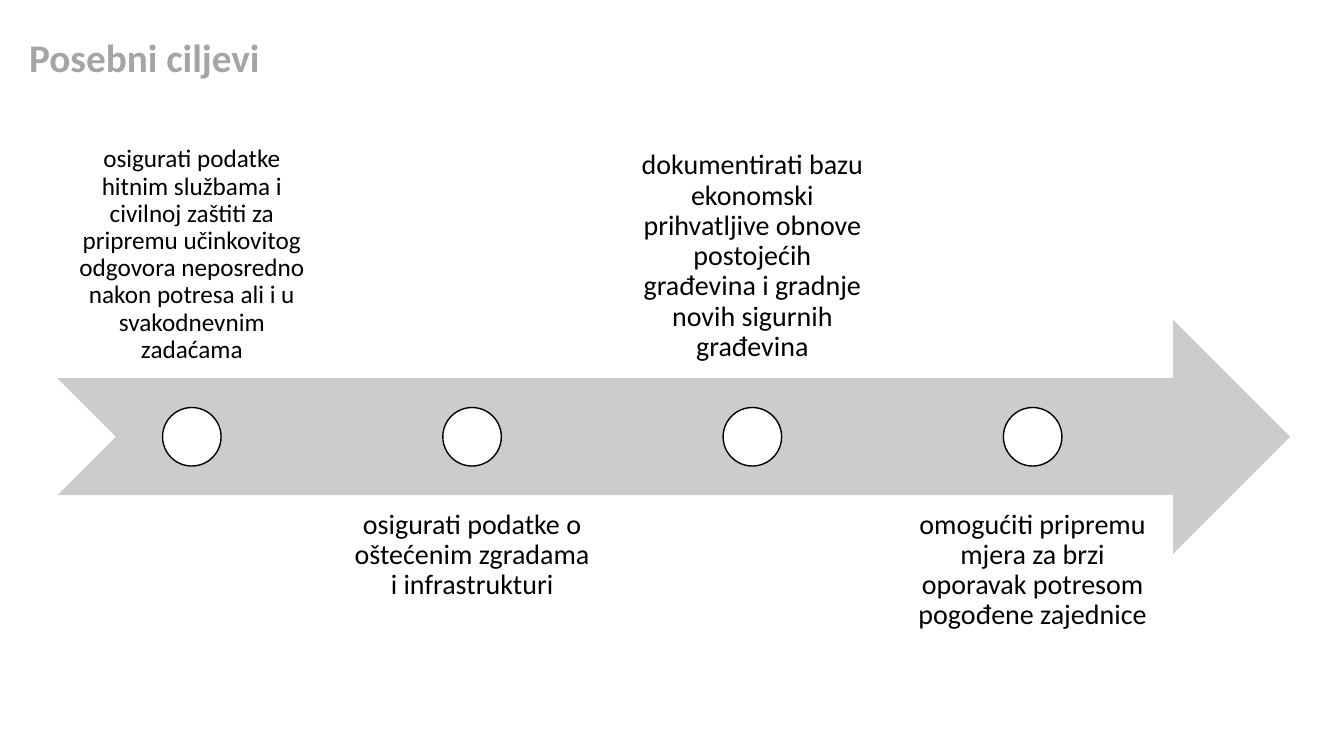
from pptx import Presentation
from pptx.dml.color import RGBColor
from pptx.enum import shapes, text
from pptx.util import Pt

GOALS = [
    ("osigurati podatke hitnim službama i civilnoj zaštiti za pripremu učinkovitog "
     "odgovora neposredno nakon potresa ali i u svakodnevnim zadaćama", 18),
    ("osigurati podatke o oštećenim zgradama i infrastrukturi", 20),
    ("dokumentirati bazu ekonomski prihvatljive obnove postojećih građevina i gradnje "
     "novih sigurnih građevina", 20),
    ("omogućiti pripremu mjera za brzi oporavak potresom pogođene zajednice", 20),
]


def colour(value):
    return RGBColor.from_string(value)


class Slide:
    """Style and current page; all lengths are in points."""
    font = "Calibri"
    grey, band, black, white = "A5A5A5", "CCCCCC", "000000", "FFFFFF"

    def __init__(self, deck):
        self.page = deck.slides.add_slide(deck.slide_layouts[5])

    def set_text(self, frame, wording, size, ink, align, anchor, bold=False):
        frame.word_wrap = True
        frame.auto_size = text.MSO_AUTO_SIZE.NONE
        frame.vertical_anchor = anchor
        para = frame.paragraphs[0]
        para.alignment = align
        para.line_spacing = 0.9
        span = para.add_run()
        span.text = wording
        span.font.name = self.font
        span.font.size = Pt(size)
        span.font.bold = bold
        span.font.color.rgb = colour(ink)

    def title(self, wording, left, top, width, height):
        box = self.page.shapes.title
        box.left, box.top, box.width, box.height = map(Pt, (left, top, width, height))
        self.set_text(box.text_frame, wording, 28, self.grey,
                      text.PP_ALIGN.LEFT, text.MSO_ANCHOR.MIDDLE, bold=True)

    def shape(self, kind, left, top, width, height, fill, line=None):
        shape = self.page.shapes.add_shape(kind, *map(Pt, (left, top, width, height)))
        shape.shadow.inherit = False
        shape.fill.solid()
        shape.fill.fore_color.rgb = colour(fill)
        if line:
            shape.line.color.rgb = colour(line)
            shape.line.width = Pt(1)
        else:
            shape.line.fill.background()

    def label(self, wording, size, left, top, width, height, anchor):
        box = self.page.shapes.add_textbox(*map(Pt, (left, top, width, height)))
        frame = box.text_frame
        inset = Pt(size * 0.56)
        frame.margin_left = frame.margin_right = inset
        frame.margin_top = frame.margin_bottom = inset
        self.set_text(frame, wording, size, self.black, text.PP_ALIGN.CENTER, anchor)


def main():
    deck = Presentation()
    deck.slide_width, deck.slide_height = Pt(960), Pt(540)
    slide = Slide(deck)

    # Title
    slide.title("Posebni ciljevi", 13.7, 7.2, 880.6, 70.6)

    # Timeline arrow
    arrow_top, arrow_height = 228.4, 167.2
    slide.shape(shapes.MSO_SHAPE.NOTCHED_RIGHT_ARROW, 41, arrow_top, 880.6,
                arrow_height, slide.band)

    # Goals alternate above and below the arrow, each with a milestone
    first_left, step, width, dot = 41.6, 200.2, 190.8, 41.8
    for index, (wording, size) in enumerate(GOALS):
        left = first_left + index * step
        above = index % 2 == 0
        top, anchor = ((102.8, text.MSO_ANCHOR.BOTTOM) if above
                       else (353, text.MSO_ANCHOR.TOP))
        slide.label(wording, size, left, top, width, arrow_height, anchor)
        slide.shape(shapes.MSO_SHAPE.OVAL, left + (width - dot) / 2,
                    arrow_top + (arrow_height - dot) / 2, dot, dot,
                    slide.white, slide.black)

    deck.save("out.pptx")


if __name__ == "__main__":
    main()
